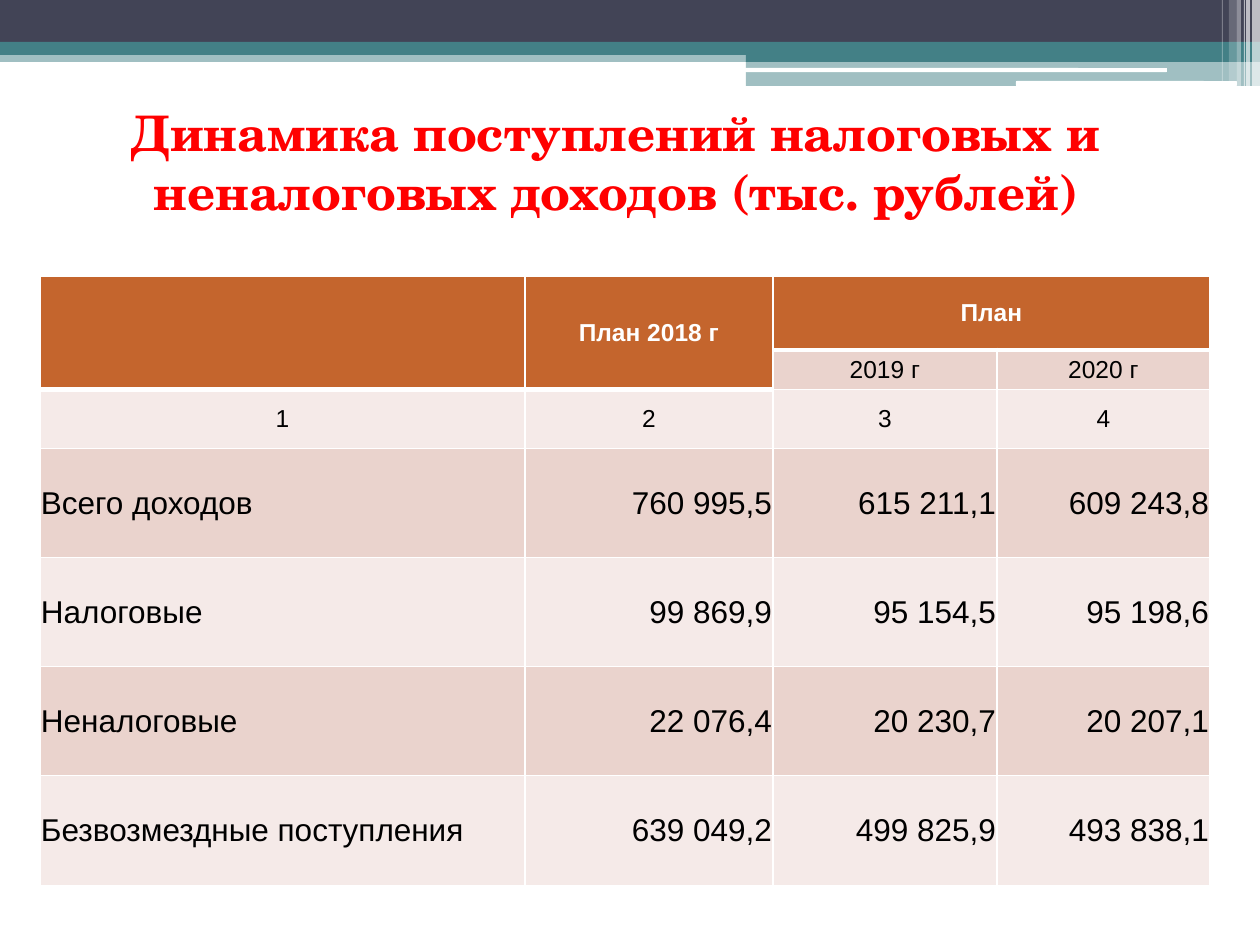
from lxml import etree
from pptx import Presentation
from pptx import util as u
from pptx.dml import color
from pptx.enum import shapes, text
from pptx.oxml import ns

# Content
TITLE = "Динамика поступлений налоговых и неналоговых доходов (тыс. рублей)"
ROWS = [
    ("", "План 2018 г", "План", ""),
    ("", "", "2019 г", "2020 г"),
    ("1", "2", "3", "4"),
    ("Всего доходов", "760 995,5", "615 211,1", "609 243,8"),
    ("Налоговые", "99 869,9", "95 154,5", "95 198,6"),
    ("Неналоговые", "22 076,4", "20 230,7", "20 207,1"),
    ("Безвозмездные поступления", "639 049,2", "499 825,9", "493 838,1"),
]
MERGES = [((0, 0), (1, 0)), ((0, 1), (1, 1)), ((0, 2), (0, 3))]
HEADER = {(0, 0), (0, 1), (0, 2), (0, 3), (1, 0), (1, 1)}
FIRST_DATA_ROW = 3

THEME = {
    "dark": "424456", "teal": "438086", "white": "FFFFFF", "black": "000000",
    "title": "FF0000", "header": "C4652D", "bands": ("F5EAE8", "EAD3CD"),
    "title_font": "TeX Gyre Schola", "table_font": "Arial",
    "title_size": 28, "head_size": 14, "data_size": 18,
    "line": 1, "heavy_line": 3,
}

# Geometry in px, 126 to the inch
SCALE = 914400 / 126
SLIDE = (1260, 945)
TITLE_BOX = (49, 88, 1134, 147)
TABLE_AT = (40, 276)
COLUMN_WIDTHS = (485, 248, 224, 213)
ROW_HEIGHTS = (74, 39, 59, 109, 109, 109, 110)

# Banner parts: box, colour, opacity in percent
BANDS = [
    ((0, 50, 1260, 12), "teal", 50),
    ((0, 0, 1260, 43), "dark", 100),
    ((0, 42, 1260, 13), "teal", 100),
    ((746, 49, 514, 13), "teal", 100),
    ((746, 61, 514, 25), "teal", 50),
]
BARS = [(745, 68, 422, 4), (1016, 81, 221, 5)]
# Stripes at the right edge: left, width, height, opacity
STRIPES = [(1252, 8, 86, 65), (1246, 4, 86, 65), (1244, 1, 86, 60),
           (1237, 4, 86, 40), (1229, 8, 81, 20), (1222, 1, 81, 30)]


def px(value):
    return u.Emu(round(value * SCALE))


def rgb(name):
    return color.RGBColor.from_string(THEME.get(name, name))


def apply(target, values):
    for name, value in values.items():
        setattr(target, name, value)


def place(shape, box):
    apply(shape, dict(zip(("left", "top", "width", "height"), map(px, box))))


def write(frame, words, align, font, font_color):
    para = frame.paragraphs[0]
    para.alignment = align
    span = para.add_run()
    span.text = words
    apply(span.font, font)
    span.font.color.rgb = rgb(font_color)


def add_block(page, kind, box, fill, opacity=100):
    block = page.shapes.add_shape(kind, *map(px, box))
    block.shadow.inherit = False
    block.line.fill.background()
    block.fill.solid()
    block.fill.fore_color.rgb = rgb(fill)
    if opacity < 100:
        tint = block.fill._xPr.find(".//" + ns.qn("a:srgbClr"))
        etree.SubElement(tint, ns.qn("a:alpha"), val=str(opacity * 1000))


def add_borders(cell, widths):
    properties = cell._tc.get_or_add_tcPr()
    for side, width in widths.items():
        line = etree.SubElement(properties, ns.qn("a:ln" + side), w=str(u.Pt(width)))
        fill = etree.SubElement(line, ns.qn("a:solidFill"))
        etree.SubElement(fill, ns.qn("a:srgbClr"), val=THEME["white"])


def draw_banner(page):
    for box, fill, opacity in BANDS:
        add_block(page, shapes.MSO_SHAPE.RECTANGLE, box, fill, opacity)
    for box in BARS:
        add_block(page, shapes.MSO_SHAPE.ROUNDED_RECTANGLE, box, "white")
    for left, width, height, opacity in STRIPES:
        add_block(page, shapes.MSO_SHAPE.RECTANGLE, (left, 0, width, height), "white", opacity)


def draw_title(page):
    title = page.shapes.title
    place(title, TITLE_BOX)
    apply(title.text_frame, {"word_wrap": True, "vertical_anchor": text.MSO_ANCHOR.MIDDLE})
    font = {"name": THEME["title_font"], "size": u.Pt(THEME["title_size"]), "bold": True}
    write(title.text_frame, TITLE, text.PP_ALIGN.CENTER, font, "title")


def format_cell(cell, row, column, words):
    is_header = (row, column) in HEADER
    is_data = row >= FIRST_DATA_ROW
    apply(cell, {"margin_left": px(1), "margin_top": px(1), "margin_right": px(1),
                 "margin_bottom": 0, "vertical_anchor": text.MSO_ANCHOR.MIDDLE})

    # Borders come before the fill in the cell properties
    widths = dict.fromkeys("LRTB" if row == 0 else "LRB", THEME["line"])
    if is_header:
        widths["B"] = THEME["heavy_line"]
    add_borders(cell, widths)
    cell.fill.solid()
    cell.fill.fore_color.rgb = rgb("header" if is_header else THEME["bands"][row % 2])

    if words:
        align = text.PP_ALIGN.CENTER
        if is_data:
            align = text.PP_ALIGN.RIGHT if column else text.PP_ALIGN.LEFT
        size = THEME["data_size" if is_data else "head_size"]
        font = {"name": THEME["table_font"], "size": u.Pt(size), "bold": is_header}
        write(cell.text_frame, words, align, font, "white" if is_header else "black")


def draw_table(page):
    size = (sum(COLUMN_WIDTHS), sum(ROW_HEIGHTS))
    table = page.shapes.add_table(len(ROWS), len(COLUMN_WIDTHS),
                                  *map(px, TABLE_AT + size)).table
    for column, width in zip(table.columns, COLUMN_WIDTHS):
        column.width = px(width)
    for row, height in zip(table.rows, ROW_HEIGHTS):
        row.height = px(height)
    for first, last in MERGES:
        table.cell(*first).merge(table.cell(*last))
    for row, values in enumerate(ROWS):
        for column, words in enumerate(values):
            format_cell(table.cell(row, column), row, column, words)


def main():
    deck = Presentation()
    deck.slide_width, deck.slide_height = map(px, SLIDE)
    page = deck.slides.add_slide(deck.slide_layouts.get_by_name("Title Only"))
    draw_banner(page)
    draw_title(page)
    draw_table(page)
    deck.save("out.pptx")


if __name__ == "__main__":
    main()
